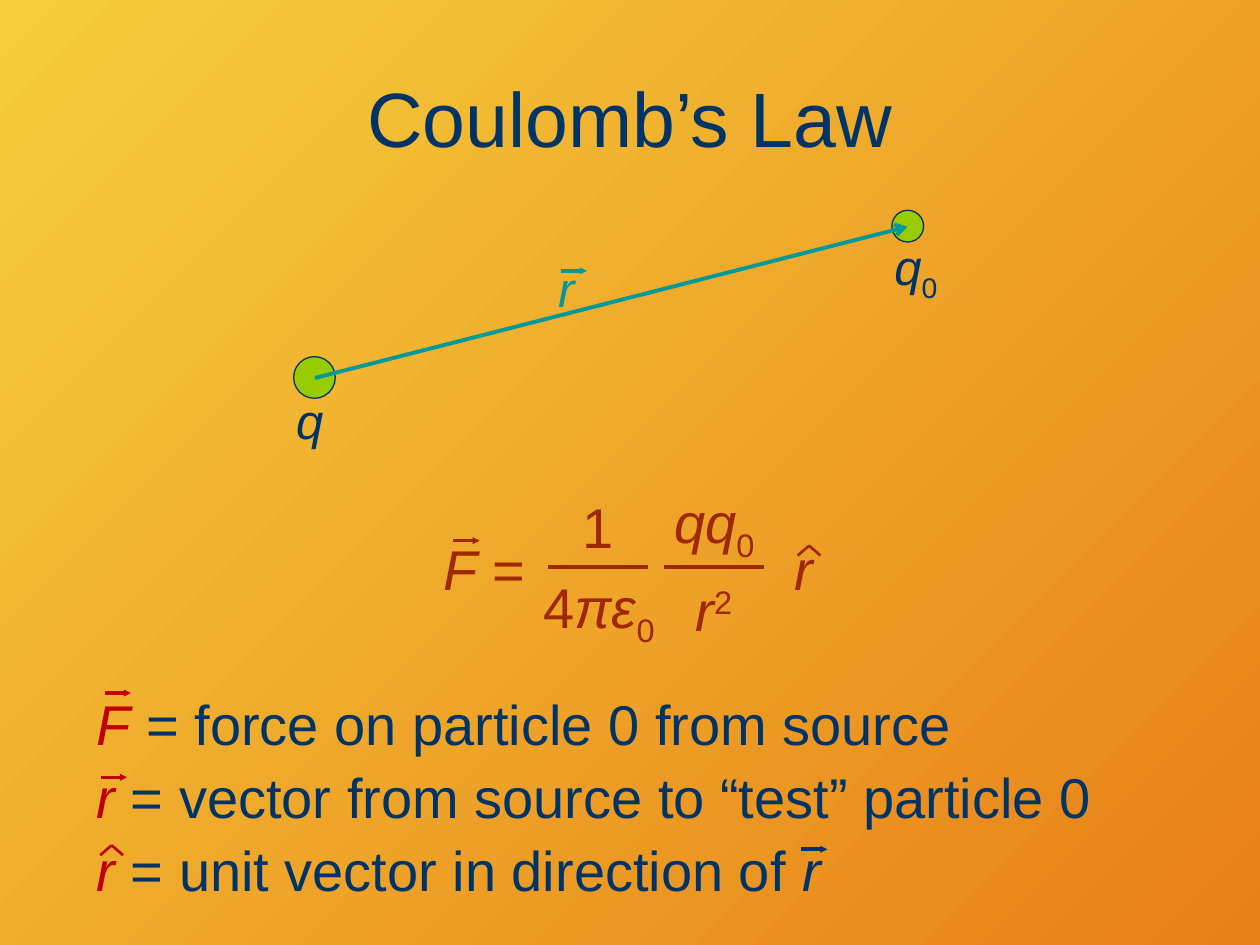
"""Build the Coulomb's Law slide."""
from lxml import etree
from pptx import Presentation
from pptx import util as u
from pptx.dml import color
from pptx.enum import shapes, text
from pptx.oxml import ns

COLORS = {"navy": "003366", "red": "C00000", "brown": "9E2800", "teal": "009999",
          "green": "99CC00", "yellow": "F5CE3D", "orange": "E88018"}


def rgb(name):
    return color.RGBColor.from_string(COLORS[name])


def add_run(p, txt, size=32, fill="navy", italic=False, base=0):
    r = p.add_run()
    r.text = txt
    r.font.name, r.font.size, r.font.italic = "Arial", u.Pt(size), italic
    r.font.color.rgb = rgb(fill)
    if base:
        r.font._element.set("baseline", str(base * 1000))


class Slide:
    sub, sup = -25, 30
    vector_length, bar_length = 0.53, 2.02
    hat_half, hat_height = 0.23, 0.2

    def __init__(self, prs):
        self.s = prs.slides.add_slide(prs.slide_layouts[5])

    def background(self, start, end):
        fill = self.s.background.fill
        fill.gradient()
        fill.gradient_angle = 315
        for stop, name in zip(fill.gradient_stops, (start, end)):
            stop.color.rgb = rgb(name)

    def title(self, txt, *box):
        sp = self.s.shapes.title
        sp.left, sp.top, sp.width, sp.height = map(u.Cm, box)
        tf = sp.text_frame
        tf.vertical_anchor = text.MSO_ANCHOR.MIDDLE
        p = tf.paragraphs[0]
        p.alignment = text.PP_ALIGN.CENTER
        add_run(p, txt, size=44)

    def textbox(self, box, runs, fill="navy", size=32, wrap=True):
        tf = self.s.shapes.add_textbox(*map(u.Cm, box)).text_frame
        tf.word_wrap = wrap
        p = tf.paragraphs[0]
        for txt, fmt in runs:
            add_run(p, txt, **{"size": size, "fill": fill, **fmt})
        return tf

    def label(self, box, runs, fill="navy", wrap=True):
        tf = self.textbox(box, runs, fill, 28, wrap)
        tf.auto_size = text.MSO_AUTO_SIZE.SHAPE_TO_FIT_TEXT

    def definition(self, box, runs):
        p = self.textbox(box, runs).paragraphs[0]
        p.space_before = u.Pt(3.6)

    def term(self, box, runs, align=text.PP_ALIGN.CENTER):
        p = self.textbox(box, runs, "brown").paragraphs[0]
        p.alignment, p.line_spacing, p.space_before = align, 0.9, u.Pt(3.6)

    def line(self, x1, y1, x2, y2, fill, width, head=None, head_size="med"):
        cx = self.s.shapes.add_connector(
            shapes.MSO_CONNECTOR.STRAIGHT, *map(u.Cm, (x1, y1, x2, y2)))
        cx.line.color.rgb, cx.line.width = rgb(fill), u.Pt(width)
        if head:
            etree.SubElement(cx.line._get_or_add_ln(), ns.qn("a:tailEnd"),
                             type=head, w=head_size, len=head_size)
        etree.SubElement(cx._element.spPr, ns.qn("a:effectLst"))

    def vector(self, x, y, fill):
        self.line(x, y, x + self.vector_length, y, fill, 2, "triangle", "sm")

    def hat(self, x, y, fill):
        for dx in (-self.hat_half, self.hat_half):
            self.line(x + dx, y + self.hat_height, x, y, fill, 1.5)

    def bar(self, x, y):
        self.line(x, y, x + self.bar_length, y, "brown", 2.25)

    def charge(self, x, y, size):
        sp = self.s.shapes.add_shape(
            shapes.MSO_SHAPE.OVAL, *map(u.Cm, (x, y, size, size)))
        sp.shadow.inherit = False
        sp.fill.solid()
        sp.fill.fore_color.rgb = rgb("green")
        sp.line.color.rgb, sp.line.width = rgb("navy"), u.Pt(0.75)


def main():
    prs = Presentation()
    prs.slide_width, prs.slide_height = u.Cm(25.4), u.Cm(19.05)
    slide = Slide(prs)
    slide.background("yellow", "orange")
    slide.title("Coulomb’s Law", 1.27, 0.76, 22.86, 3.18)

    plain, it = {}, {"italic": True}
    red = {"italic": True, "fill": "red"}
    sub, sup = {"base": slide.sub}, {"base": slide.sup}

    definitions = [
        (22.65, [("F", red), (" = force on particle 0 from source", plain)]),
        (22.65, [("r", red), (" = vector from source to “test” particle 0", plain)]),
        (15.44, [("r", red), (" = unit vector in direction of ", plain), ("r", it)]),
    ]
    for i, (width, runs) in enumerate(definitions):
        slide.definition((1.7, 13.77 + 1.47 * i, width, 1.7), runs)
    slide.vector(2.11, 13.97, "red")
    slide.vector(2.03, 15.67, "red")
    slide.hat(2.25, 17.04, "red")
    slide.vector(16.15, 17.12, "navy")

    slide.term((8.69, 10.8, 2.34, 1.47), [("F ", it), ("=", plain)], text.PP_ALIGN.LEFT)
    slide.term((11.43, 9.96, 1.27, 1.27), [("1", plain)])
    slide.term((10.59, 11.43, 2.97, 1.7), [("4", plain), ("πε", it), ("0", sub)])
    slide.term((13.13, 9.73, 2.54, 1.7), [("qq", it), ("0", sub)])
    slide.term((13.54, 11.63, 1.7, 1.47), [("r", it), ("2", sup)])
    slide.term((15.67, 10.8, 1.07, 1.27), [("r", it)])
    for x in (11.05, 13.39):
        slide.bar(x, 11.43)
    slide.vector(9.14, 10.9, "brown")
    slide.hat(16.31, 11, "brown")

    slide.charge(5.92, 7.19, 0.84)
    slide.charge(17.98, 4.24, 0.64)
    slide.line(6.35, 7.62, 18.29, 4.57, "teal", 2.25, "arrow")
    slide.label((5.72, 7.75, 1.07, 1.45), [("q", it)], wrap=False)
    slide.label((17.78, 4.65, 1.47, 1.45), [("q", it), ("0", sub)])
    slide.label((11, 5.08, 0.84, 1.45), [("r", it)], "teal")
    slide.vector(11.3, 5.46, "teal")
    prs.save("out.pptx")


if __name__ == "__main__":
    main()
